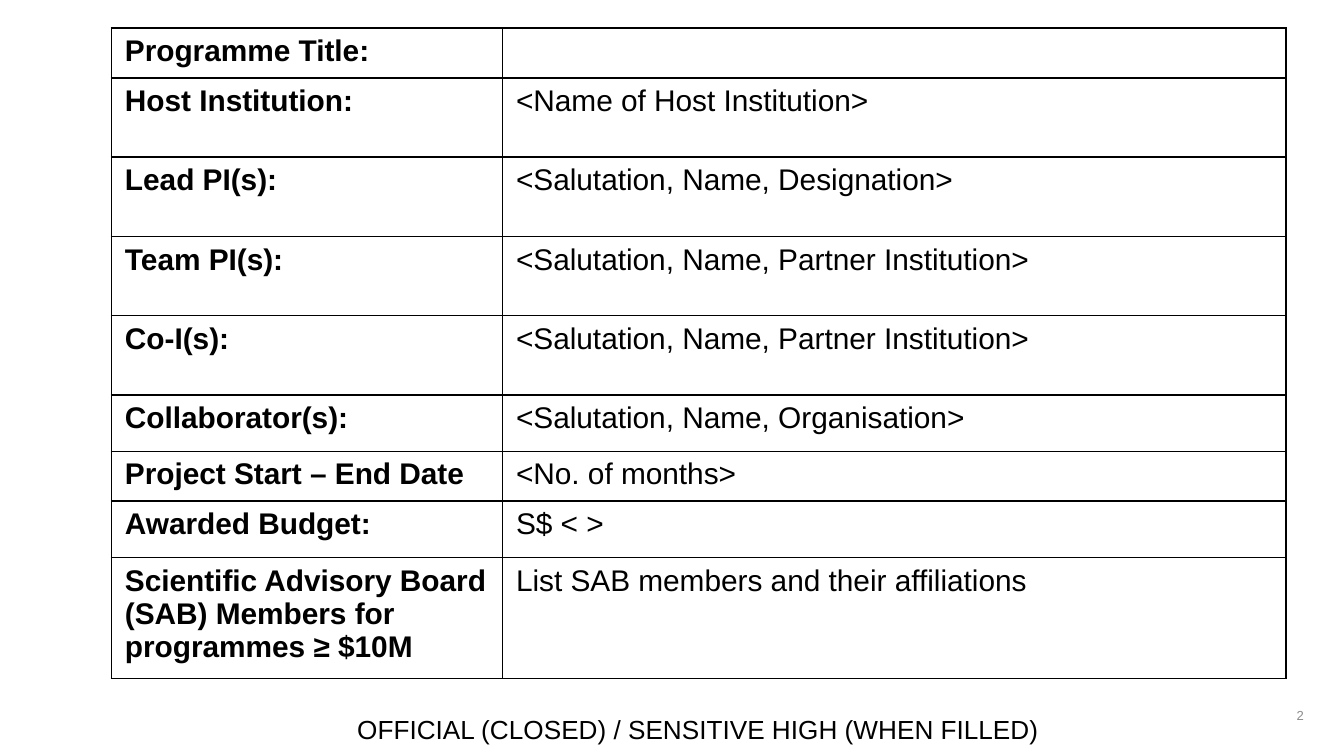
from lxml.etree import SubElement
from pptx import Presentation
from pptx.dml.color import RGBColor
from pptx.enum.text import MSO_ANCHOR as Anchor, PP_ALIGN as Align
from pptx.oxml import parse_xml
from pptx.oxml.ns import nsdecls, qn
from pptx.util import Inches, Pt

BLACK = "000000"
GREY = "8C8C8C"
ROWS = [
    ("Programme Title:", "", 0.37),
    ("Host Institution:", "<Name of Host Institution>", 0.59),
    ("Lead PI(s):", "<Salutation, Name, Designation>", 0.59),
    ("Team PI(s):", "<Salutation, Name, Partner Institution>", 0.59),
    ("Co-I(s):", "<Salutation, Name, Partner Institution>", 0.59),
    ("Collaborator(s):", "<Salutation, Name, Organisation>", 0.42),
    ("Project Start – End Date", "<No. of months>", 0.37),
    ("Awarded Budget:", "S$ < >", 0.42),
    ("Scientific Advisory Board (SAB) Members for programmes ≥ $10M",
     "List SAB members and their affiliations", 0.9),
]


def color(value):
    return RGBColor.from_string(value)


class Deck:
    font = "Arial"

    def __init__(self, width):
        self.prs = Presentation()
        self.prs.slide_width = Inches(width)
        self.prs.slide_height = Inches(width * 9 / 16)

    def slide(self):
        self.s = self.prs.slides.add_slide(self.prs.slide_layouts[6])

    def run(self, p, text, size, fill=BLACK, bold=False):
        r = p.add_run()
        r.text = text
        r.font.name = self.font
        r.font.size = Pt(size)
        r.font.bold = bold
        r.font.color.rgb = color(fill)

    def text(self, x, y, w, h, text, size, fill=BLACK, align=Align.LEFT, anchor=Anchor.TOP):
        tf = self.s.shapes.add_textbox(Inches(x), Inches(y), Inches(w), Inches(h)).text_frame
        tf.word_wrap = True
        tf.vertical_anchor = anchor
        p = tf.paragraphs[0]
        p.alignment = align
        self.run(p, text, size, fill)

    def borders(self, cell, fill=BLACK, width=1):
        tcPr = cell._tc.get_or_add_tcPr()
        for i, side in enumerate("LRTB"):
            tcPr.insert(i, parse_xml(
                f'<a:ln{side} {nsdecls("a")} w="{Pt(width)}"><a:solidFill>'
                f'<a:srgbClr val="{fill}"/></a:solidFill></a:ln{side}>'))

    def table(self, x, y, widths, rows, size):
        heights = [row[-1] for row in rows]
        table = self.s.shapes.add_table(
            len(rows), len(widths), Inches(x), Inches(y),
            Inches(sum(widths)), Inches(sum(heights))).table
        table.first_row = table.horz_banding = False
        for column, width in zip(table.columns, widths):
            column.width = Inches(width)
        for i, (*texts, height) in enumerate(rows):
            table.rows[i].height = Inches(height)
            for j, text in enumerate(texts):
                cell = table.cell(i, j)
                cell.fill.background()
                self.borders(cell)
                p = cell.text_frame.paragraphs[0]
                if text:
                    self.run(p, text, size, bold=j == 0)
                else:
                    SubElement(p._p, qn("a:endParaRPr")).set("sz", str(size * 100))


def main():
    deck = Deck(10)
    deck.slide()
    deck.text(7.47, 5.17, 2.33, 0.3, "2", 7, GREY, Align.RIGHT, Anchor.MIDDLE)
    deck.text(2.56, 5.26, 5.43, 0.34, "OFFICIAL (CLOSED) / SENSITIVE HIGH (WHEN FILLED)", 14)
    deck.table(0.83, 0.21, (2.91, 5.83), ROWS, 16)
    deck.prs.save("out.pptx")


if __name__ == "__main__":
    main()
